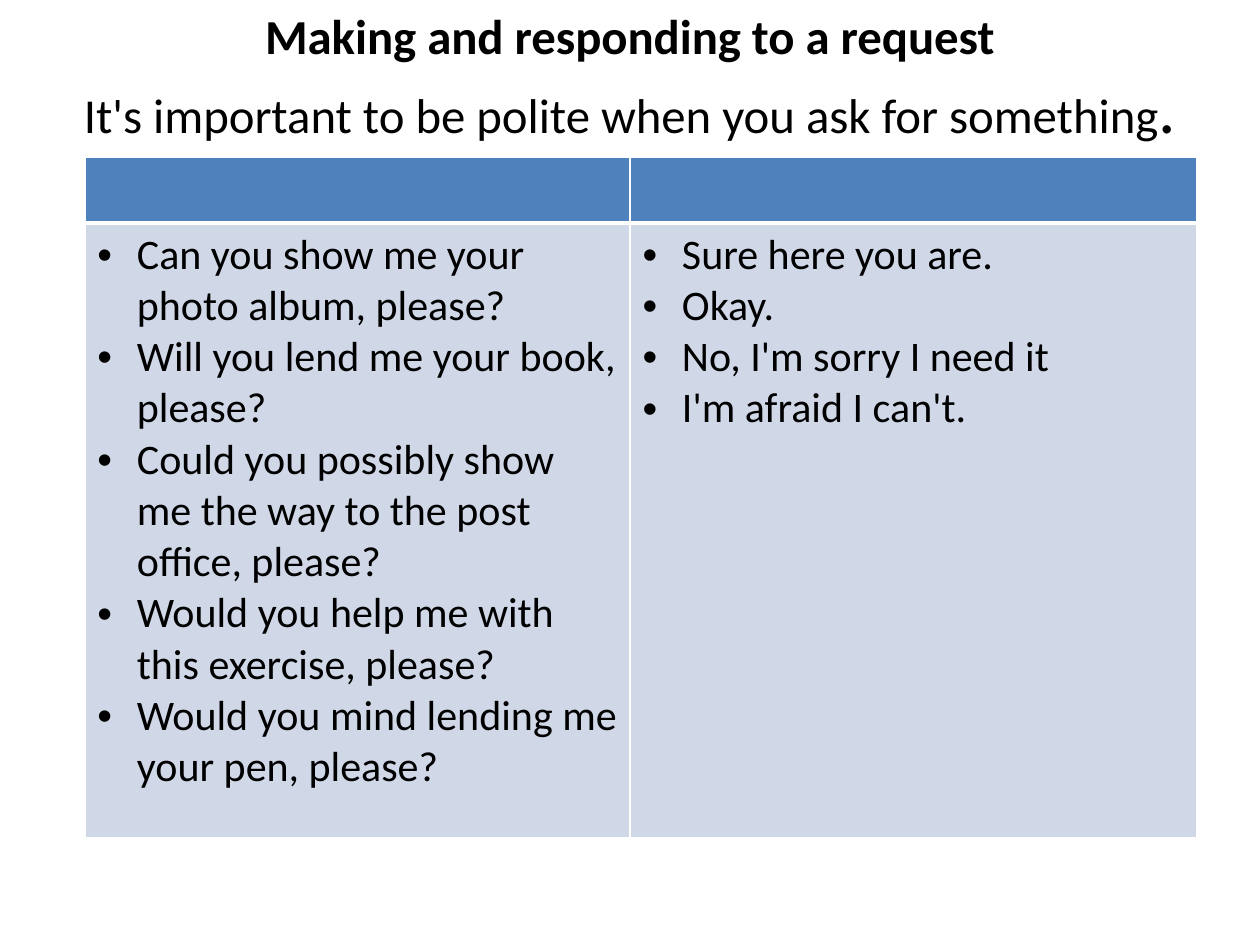
from lxml.etree import SubElement, fromstring
from pptx import Presentation
from pptx.dml.color import RGBColor
from pptx.enum.text import PP_ALIGN as Align
from pptx.oxml.ns import nsdecls, qn
from pptx.util import Pt

COLORS = {"text": "000000", "header": "4F81BD", "body": "D0D8E8", "border": "FFFFFF"}
REQUESTS = [
    "Can you show me your photo album, please?",
    "Will you lend me your book, please?",
    "Could you possibly show me the way to the post office, please?",
    "Would you help me with this exercise, please?",
    "Would you mind lending me your pen, please?",
]
RESPONSES = [
    "Sure here you are.",
    "Okay.",
    "No, I'm sorry I need it",
    "I'm afraid I can't.",
]


class SlideBuilder:
    font_name = "Calibri"
    bullet_indent = 22.5

    def __init__(self, slide):
        self.slide = slide

    def format_run(self, run, size, bold=False):
        run.font.name = self.font_name
        run.font.size = Pt(size)
        run.font.bold = bold
        run.font.color.rgb = RGBColor.from_string(COLORS["text"])

    def heading(self, left, top, width, height, title, sentence, ending):
        shape = self.slide.shapes.add_textbox(Pt(left), Pt(top), Pt(width), Pt(height))
        frame = shape.text_frame
        frame.word_wrap = True
        frame.margin_left = frame.margin_right = 0
        frame.margin_top = frame.margin_bottom = 0
        frame.text = f"{title}\n{sentence}"
        first, second = frame.paragraphs
        self.format_run(first.runs[0], 27.9, bold=True)
        self.format_run(second.runs[0], 27.9)
        period = second.add_run()
        period.text = ending
        self.format_run(period, 39.6)
        for paragraph in frame.paragraphs:
            paragraph.alignment = Align.CENTER

    def bullets(self, cell, lines):
        cell.text_frame.text = "\n".join(lines)
        for paragraph in cell.text_frame.paragraphs:
            properties = paragraph._p.get_or_add_pPr()
            properties.set("marL", str(Pt(self.bullet_indent)))
            properties.set("indent", str(-Pt(self.bullet_indent)))
            SubElement(properties, qn("a:buFont")).set("typeface", "Arial")
            SubElement(properties, qn("a:buChar")).set("char", "•")
            for run in paragraph.runs:
                self.format_run(run, 24)

    def paint_cell(self, cell, color, top, bottom):
        cell.fill.solid()
        cell.fill.fore_color.rgb = RGBColor.from_string(COLORS[color])
        properties = cell._tc.get_or_add_tcPr()
        widths = {"lnL": 1, "lnR": 1, "lnT": top, "lnB": bottom}
        for position, (side, width) in enumerate(widths.items()):
            border = fromstring(
                f'<a:{side} {nsdecls("a")} w="{Pt(width)}"><a:solidFill>'
                f'<a:srgbClr val="{COLORS["border"]}"/></a:solidFill></a:{side}>'
            )
            properties.insert(position, border)

    def table(self, left, top, widths, heights, columns):
        frame = self.slide.shapes.add_table(
            len(heights), len(widths), Pt(left), Pt(top), Pt(sum(widths)), Pt(sum(heights))
        )
        table = frame.table
        table.first_row = table.horz_banding = False
        for row, height in zip(table.rows, heights):
            row.height = Pt(height)
        for index, (width, lines) in enumerate(zip(widths, columns)):
            table.columns[index].width = Pt(width)
            self.paint_cell(table.cell(0, index), "header", 1, 3)
            self.paint_cell(table.cell(1, index), "body", 3, 1)
            self.bullets(table.cell(1, index), lines)


def main():
    presentation = Presentation()
    presentation.slide_width, presentation.slide_height = Pt(720), Pt(540)
    builder = SlideBuilder(presentation.slides.add_slide(presentation.slide_layouts[6]))
    builder.heading(
        36, 3, 648, 84,
        "Making and responding to a request",
        "It's important to be polite when you ask for something", ".",
    )
    builder.table(48.5, 90, [311.5, 324], [37.5, 351], [REQUESTS, RESPONSES])
    presentation.save("out.pptx")


if __name__ == "__main__":
    main()
